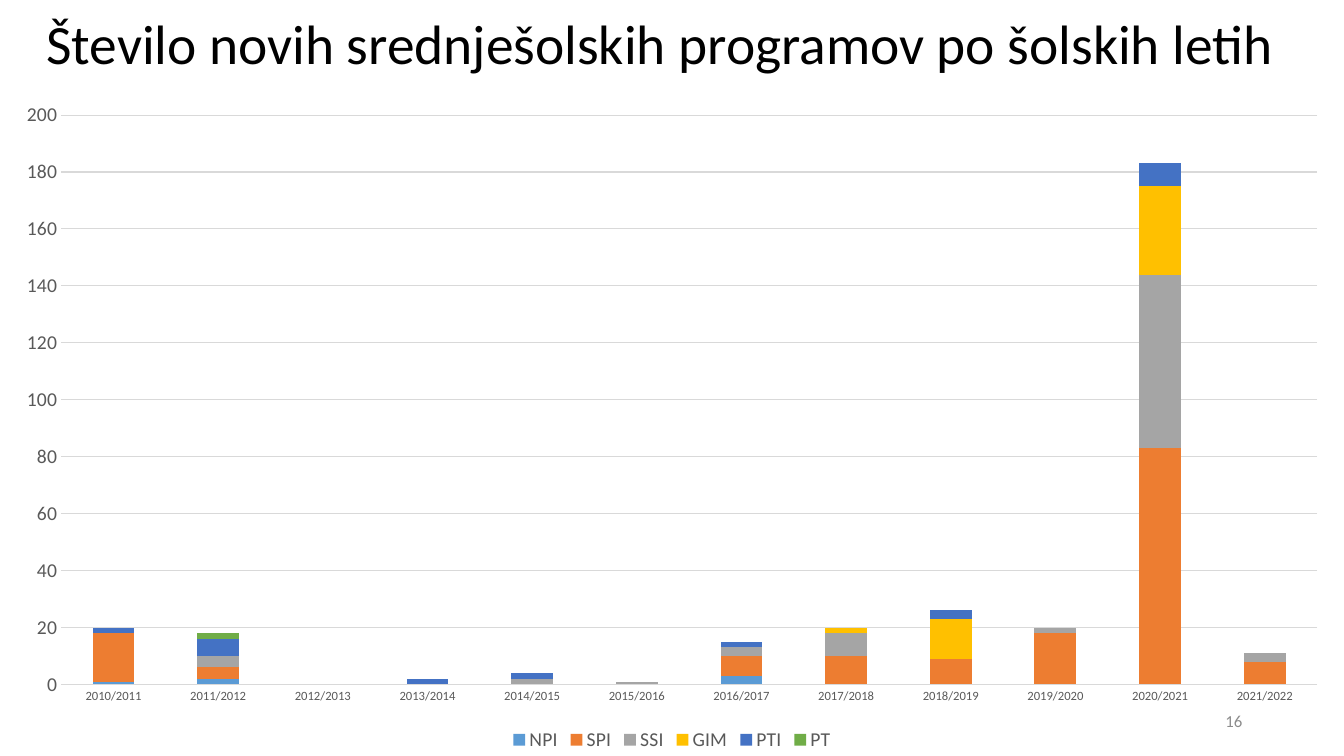
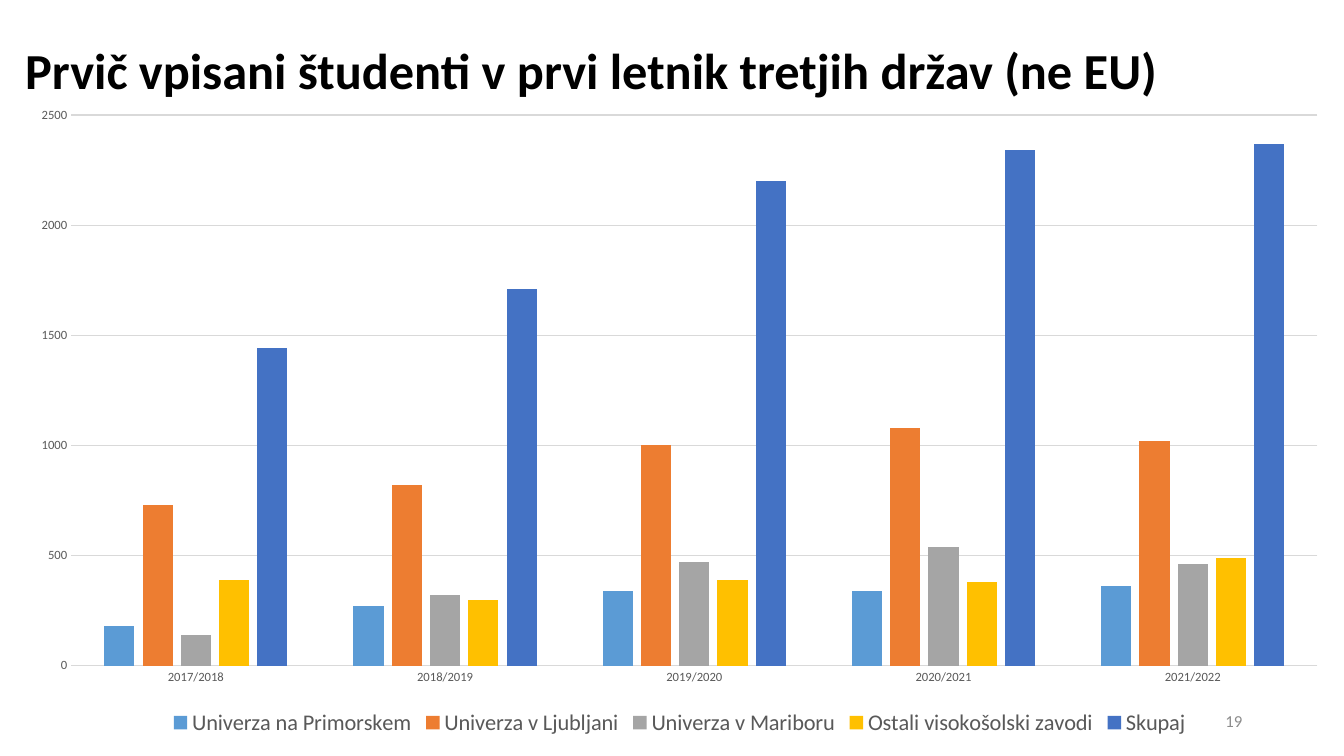
from pptx import Presentation
from pptx import util as u
from pptx.chart.data import CategoryChartData
from pptx.dml.color import RGBColor
from pptx.enum import chart as charts, text

# Shared style
PX = 9144  # EMU per px, 100 px to the inch
FONT = "Calibri"
BLACK, AXIS_TEXT, NUMBER_TEXT, GRID = "000000", "595959", "8C8C8C", "D9D9D9"
SERIES_COLORS = ["5B9BD5", "ED7D31", "A5A5A5", "FFC000", "4472C4", "70AD47"]
NUMBER_BOX = (942, 695, 300, 40)

# Chart data
PROGRAMMES = {
    "NPI": [1, 2, None, None, None, None, 3, None, None, None, None, None],
    "SPI": [17, 4, None, None, None, None, 7, 10, 9, 18, 83, 8],
    "SSI": [None, 4, None, None, 2, 1, 3, 8, None, 2, 61, 3],
    "GIM": [None, None, None, None, None, None, None, 2, 14, None, 31, None],
    "PTI": [2, 6, None, 2, 2, None, 2, None, 3, None, 8, None],
    "PT": [None, 2] + [None] * 10,
}
STUDENTS = {
    "Univerza na Primorskem": [180, 270, 340, 340, 360],
    "Univerza v Ljubljani": [730, 820, 1000, 1080, 1020],
    "Univerza v Mariboru": [140, 320, 470, 540, 460],
    "Ostali visokošolski zavodi": [390, 300, 390, 380, 490],
    "Skupaj": [1440, 1710, 2200, 2340, 2370],
}


def color(hex_string):
    return RGBColor.from_string(hex_string)


def px(*lengths):
    return [u.Emu(length * PX) for length in lengths]


def school_years(first, last):
    return [f"{year}/{year + 1}" for year in range(first, last + 1)]


def style_font(font, size, hex_color, bold=False):
    font.name, font.size, font.bold = FONT, u.Pt(size), bold
    font.color.rgb = color(hex_color)


def write_text(shape, content, size, hex_color=BLACK, bold=False,
               align=text.PP_ALIGN.LEFT, line_spacing=None):
    frame = shape.text_frame
    frame.word_wrap = True
    frame.auto_size = text.MSO_AUTO_SIZE.NONE
    frame.vertical_anchor = text.MSO_ANCHOR.MIDDLE
    paragraph = frame.paragraphs[0]
    paragraph.alignment, paragraph.line_spacing = align, line_spacing
    run = paragraph.add_run()
    run.text = content
    style_font(run.font, size, hex_color, bold)


def add_title_slide(presentation, title, box, size, bold=False):
    slide = presentation.slides.add_slide(presentation.slide_layouts[5])
    shape = slide.shapes.title
    shape.left, shape.top, shape.width, shape.height = px(*box)
    write_text(shape, title, size, bold=bold, line_spacing=0.9)
    return slide


def add_page_number(slide, number):
    shape = slide.shapes.add_textbox(*px(*NUMBER_BOX))
    write_text(shape, str(number), 12, NUMBER_TEXT, align=text.PP_ALIGN.RIGHT)


def style_axis(axis, size):
    axis.major_tick_mark = axis.minor_tick_mark = charts.XL_TICK_MARK.NONE
    style_font(axis.tick_labels.font, size, AXIS_TEXT)


def style_line(line):
    line.color.rgb, line.width = color(GRID), u.Pt(0.75)


def add_column_chart(slide, box, kind, categories, series, gap, overlap,
                     maximum, step, value_size, legend_size):
    data = CategoryChartData()
    data.categories = categories
    for name, values in series.items():
        data.add_series(name, values)
    chart = slide.shapes.add_chart(kind, *px(*box), data).chart
    chart.has_title = False
    style_font(chart.font, 10, BLACK)

    # Columns
    plot = chart.plots[0]
    plot.gap_width, plot.overlap, plot.vary_by_categories = gap, overlap, False
    for column, fill_color in zip(plot.series, SERIES_COLORS):
        column.format.fill.solid()
        column.format.fill.fore_color.rgb = color(fill_color)
        column.invert_if_negative = False

    # Axes
    style_axis(chart.category_axis, 9)
    style_line(chart.category_axis.format.line)
    value_axis = chart.value_axis
    style_axis(value_axis, value_size)
    value_axis.format.line.fill.background()
    value_axis.minimum_scale, value_axis.maximum_scale = 0, maximum
    value_axis.major_unit = step
    style_line(value_axis.major_gridlines.format.line)

    # Legend
    chart.has_legend = True
    chart.legend.position = charts.XL_LEGEND_POSITION.BOTTOM
    chart.legend.include_in_layout = False
    style_font(chart.legend.font, legend_size, AXIS_TEXT)


def main():
    presentation = Presentation()
    presentation.slide_width, presentation.slide_height = px(1333, 750)

    # New secondary-school programmes
    slide = add_title_slide(
        presentation, "Število novih srednješolskih programov po šolskih letih",
        (36, 10, 1247, 72), 39.6)
    add_column_chart(
        slide, (0, 89, 1333, 661), charts.XL_CHART_TYPE.COLUMN_STACKED,
        school_years(2010, 2021), PROGRAMMES, gap=150, overlap=100,
        maximum=200, step=20, value_size=14, legend_size=14)
    add_page_number(slide, 16)

    # First-year students from third countries
    slide = add_title_slide(
        presentation, "Prvič vpisani študenti v prvi letnik tretjih držav (ne EU)",
        (15, 0, 1285, 145), 36, bold=True)
    add_column_chart(
        slide, (15, 94, 1318, 641), charts.XL_CHART_TYPE.COLUMN_CLUSTERED,
        school_years(2017, 2021), STUDENTS, gap=219, overlap=-27,
        maximum=2500, step=500, value_size=9, legend_size=16)
    add_page_number(slide, 19)

    presentation.save("out.pptx")


if __name__ == "__main__":
    main()
